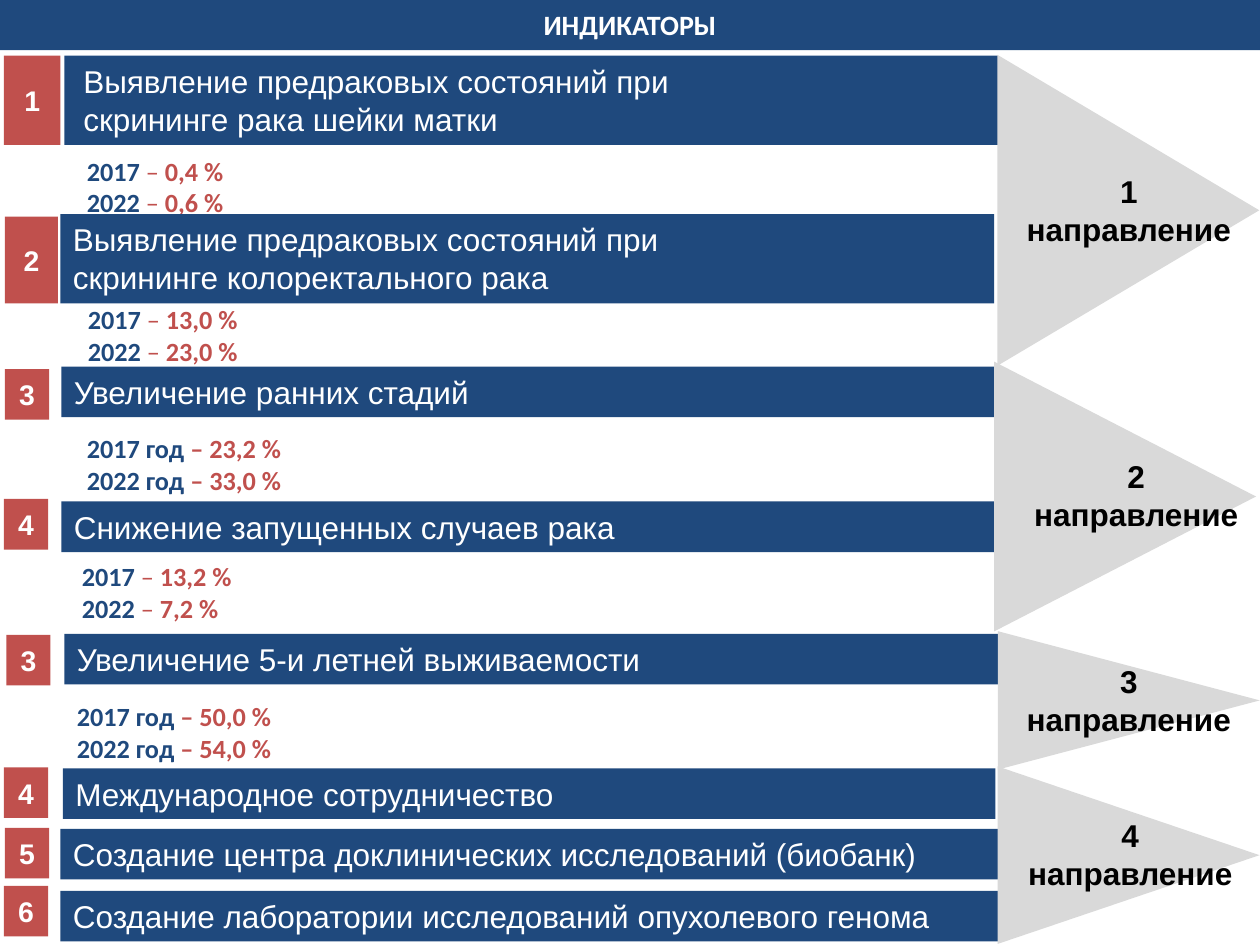
from dataclasses import dataclass
from typing import Any

from pptx import Presentation
from pptx import util as u
from pptx.dml import color
from pptx.enum import shapes, text

BLUE, RED, GREY, WHITE, BLACK = "1F497D", "C0504D", "D9D9D9", "FFFFFF", "000000"
LEFT, CENTER = text.PP_ALIGN.LEFT, text.PP_ALIGN.CENTER
BAR_H, TALL_H = 1.02, 1.8

BARS = [
    (1.3, 1.12, 18.82, ["Выявление предраковых состояний при", "скрининге рака шейки матки"], 0.38),
    (1.22, 4.32, 18.82, ["Выявление предраковых состояний при", "скрининге колоректального рака"], 0.25),
    (1.24, 7.39, 18.82, ["Увеличение ранних стадий"], 0.25),
    (1.24, 10.11, 18.82, ["Снижение запущенных случаев рака"], 0.25),
    (1.3, 12.78, 18.82, ["Увеличение 5-и летней выживаемости"], 0.25),
    (1.27, 15.49, 18.8, ["Международное сотрудничество"], 0.25),
    (1.22, 16.71, 18.9, ["Создание центра доклинических исследований (биобанк)"], 0.25),
    (1.22, 17.96, 18.9, ["Создание лаборатории исследований опухолевого генома"], 0.25),
]
BADGES = [
    ("1", 0.08, 1.12, 1.14, 1.8),
    ("2", 0.1, 4.37, 1.07, 1.75),
    ("3", 0.1, 7.44, 0.89, BAR_H),
    ("4", 0.08, 10.06, 0.89, BAR_H),
    ("3", 0.13, 12.8, 0.89, BAR_H),
    ("4", 0.08, 15.47, 0.89, BAR_H),
    ("5", 0.1, 16.69, 0.89, BAR_H),
    ("6", 0.08, 17.86, 0.89, BAR_H),
]
FIGURES = [
    (1.5, 3, 3.3, "", "0,4 %", "0,6 %"),
    (1.52, 5.99, 3.56, "", "13,0 %", "23,0 %"),
    (1.5, 8.59, 4.47, "год ", "23,2 %", "33,0 %"),
    (1.4, 11.18, 3.56, "", "13,2 %", "7,2 %"),
    (1.3, 14, 4.47, "год ", "50,0 %", "54,0 %"),
]
ARROWS = [(19.61, 1.6, 6.27), (19.96, 7.37, 5.44), (21.36, 11.48, 2.79), (20.96, 14.6, 3.58)]
LABELS = [(20.42, 3.35), (20.57, 9.09), (20.42, 13.23), (20.45, 16.33)]


def rgb(value):
    return color.RGBColor.from_string(value)


@dataclass
class Deck:
    """Draws the elements of the indicator slide in one style."""

    s: Any
    font: str = "Arial"
    title_font: str = "Calibri"

    def add_text(self, sp, paragraphs, align=LEFT):
        tf = sp.text_frame
        for i, runs in enumerate(paragraphs):
            p = tf.add_paragraph() if i else tf.paragraphs[0]
            p.alignment = align
            for wording, size, name, fill, bold in runs:
                r = p.add_run()
                r.text = wording
                r.font.size, r.font.name, r.font.bold = u.Pt(size), name, bold
                r.font.color.rgb = rgb(fill)

    def shape(self, kind, x, y, w, h, fill):
        sp = self.s.shapes.add_shape(kind, *map(u.Cm, (x, y, w, h)))
        sp.shadow.inherit = False
        sp.fill.solid()
        sp.fill.fore_color.rgb = rgb(fill)
        sp.line.fill.background()
        return sp

    def box(self, x, y, w, h, fill):
        sp = self.shape(shapes.MSO_SHAPE.RECTANGLE, x, y, w, h, fill)
        sp.text_frame.word_wrap = True
        sp.text_frame.vertical_anchor = text.MSO_ANCHOR.MIDDLE
        return sp

    def textbox(self, x, y, w, h, paragraphs, align=LEFT):
        sp = self.s.shapes.add_textbox(*map(u.Cm, (x, y, w, h)))
        sp.text_frame.word_wrap = False
        sp.text_frame.auto_size = text.MSO_AUTO_SIZE.SHAPE_TO_FIT_TEXT
        self.add_text(sp, paragraphs, align)

    def title(self, wording):
        sp = self.box(0, -0.03, 25.4, 1.04, BLUE)
        self.add_text(sp, [[(wording, 16, self.title_font, WHITE, True)]], CENTER)

    def bar(self, x, y, w, lines, inset):
        sp = self.box(x, y, w, TALL_H if len(lines) > 1 else BAR_H, BLUE)
        sp.text_frame.margin_left = u.Cm(inset)
        sp.text_frame.vertical_anchor = text.MSO_ANCHOR.TOP
        self.add_text(sp, [[(line, 18, self.font, WHITE, False)] for line in lines])

    def badge(self, number, x, y, w, h):
        sp = self.box(x, y, w, h, RED)
        self.add_text(sp, [[(number, 16.2, self.font, WHITE, True)]], CENTER)

    def figures(self, x, y, w, unit, *values):
        self.textbox(x, y, w, 1.55, [
            [(f"{year} {unit}", 15, self.title_font, BLUE, True),
             ("– ", 15, self.title_font, RED, bool(unit)),
             (value, 15, self.title_font, RED, True)]
            for year, value in zip((2017, 2022), values)])

    def arrow(self, x, y, w):
        sp = self.shape(shapes.MSO_SHAPE.ISOSCELES_TRIANGLE, x, y, w, 5.28, GREY)
        sp.rotation = 90

    def label(self, number, x, y):
        lines = (str(number), "направление")
        self.textbox(x, y, 4.67, 1.8, [[(line, 18, self.font, BLACK, True)] for line in lines], CENTER)


def main():
    prs = Presentation()
    prs.slide_width, prs.slide_height = u.Cm(25.4), u.Cm(19.05)
    deck = Deck(prs.slides.add_slide(prs.slide_layouts[6]))
    deck.title("ИНДИКАТОРЫ")
    for item in FIGURES:
        deck.figures(*item)
    for item in BARS:
        deck.bar(*item)
    for item in BADGES:
        deck.badge(*item)
    for item in ARROWS:
        deck.arrow(*item)
    for number, place in enumerate(LABELS, 1):
        deck.label(number, *place)
    prs.save("out.pptx")


if __name__ == "__main__":
    main()
